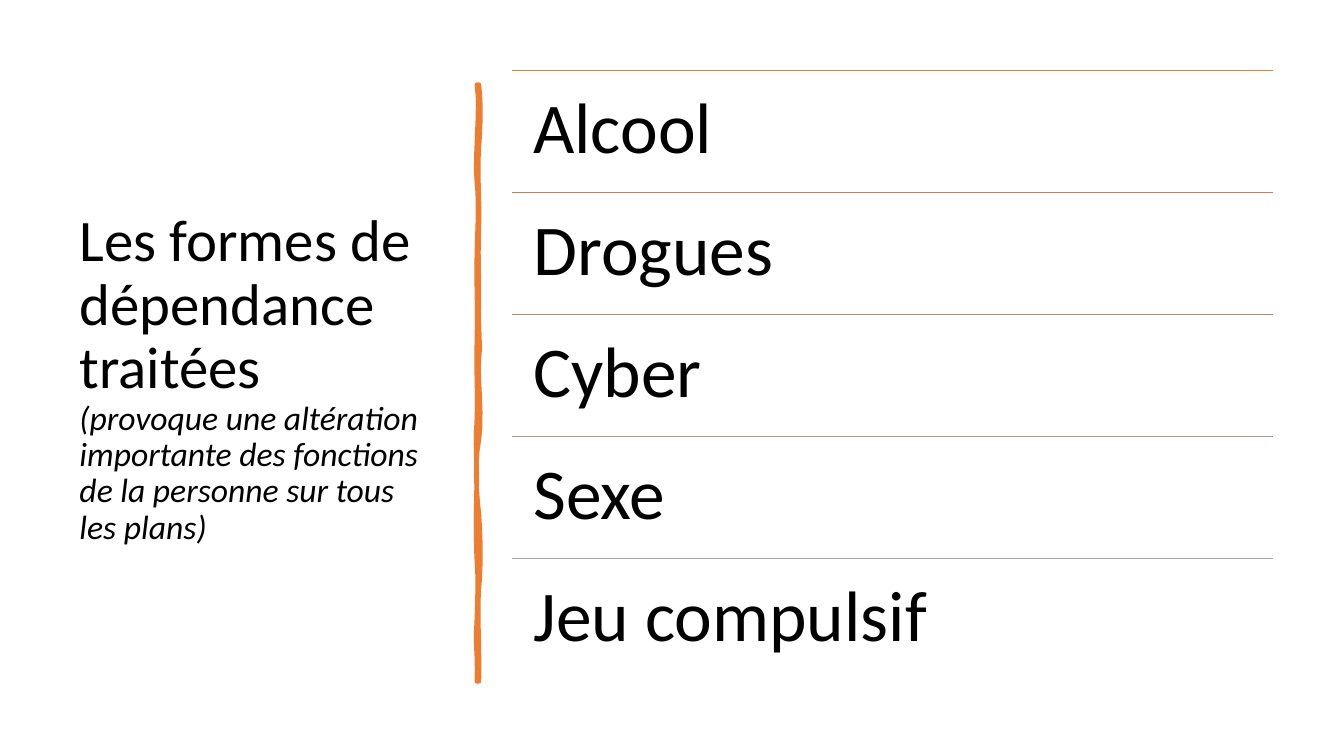
from lxml.etree import SubElement as Sub
from pptx import Presentation
from pptx.dml.color import RGBColor as Rgb
from pptx.enum.shapes import MSO_CONNECTOR as Conn
from pptx.enum.text import MSO_ANCHOR as Anchor
from pptx.oxml.ns import qn
from pptx.util import Inches, Pt

HUES = {
    "text": "000000",
    "bar": "ED7D31",
    "Alcool": "ED7D31",
    "Drogues": "D87A51",
    "Cyber": "C48170",
    "Sexe": "B4908B",
    "Jeu compulsif": "A5A5A5",
}
TOPICS = ["Alcool", "Drogues", "Cyber", "Sexe", "Jeu compulsif"]
LEFT, TOP, WIDTH, STEP = 5.08, 0.7, 7.55, 1.21
HEAD = {"size": Pt(42)}
NOTE = {"size": Pt(24), "italic": True}
ITEM = {"size": Pt(51)}
MID = {"vertical_anchor": Anchor.MIDDLE}
PAD = {f"margin_{side}": Inches(0.21)
       for side in ("left", "top", "right", "bottom")}
START = (4.75, 0.84)
CURVES = [
    (4.77, 1.02, 4.77, 1.19, 4.75, 1.46), (4.73, 1.73, 4.76, 1.95, 4.75, 2.26),
    (4.74, 2.57, 4.75, 2.62, 4.75, 2.94), (4.74, 3.25, 4.77, 3.42, 4.75, 3.56),
    (4.73, 3.7, 4.79, 4.14, 4.75, 4.36), (4.71, 4.57, 4.72, 4.84, 4.75, 5.1),
    (4.77, 5.36, 4.77, 5.64, 4.75, 5.84), (4.73, 6.03, 4.76, 6.5, 4.75, 6.76),
    (4.74, 6.76, 4.73, 6.76, 4.73, 6.76), (4.74, 6.46, 4.71, 6.44, 4.73, 6.13),
    (4.74, 5.83, 4.74, 5.7, 4.73, 5.57), (4.72, 5.44, 4.72, 4.95, 4.73, 4.77),
    (4.73, 4.59, 4.71, 4.45, 4.73, 4.15), (4.74, 3.86, 4.72, 3.73, 4.73, 3.35),
    (4.74, 2.98, 4.72, 2.81, 4.73, 2.5), (4.74, 2.18, 4.75, 2, 4.73, 1.81),
    (4.7, 1.63, 4.77, 1.04, 4.73, 0.84), (4.74, 0.84, 4.74, 0.84, 4.75, 0.84),
]


def put(obj, vals):
    """Set each named attribute of an object."""
    for name, val in vals.items():
        setattr(obj, name, val)


def hue(name):
    """Look up a colour by name."""
    return Rgb.from_string(HUES[name])


def add_run(para, text, font):
    """Add one run of formatted text."""
    run = para.add_run()
    run.text = text
    put(run.font, {"name": "Calibri", **font})
    run.font.color.rgb = hue("text")


def add_box(shapes, box, frame):
    """Add a wrapping text box and return its first paragraph."""
    body = shapes.add_textbox(*map(Inches, box)).text_frame
    put(body, {"word_wrap": True, **frame})
    para = body.paragraphs[0]
    para.line_spacing = 0.9
    return para


def add_title(shapes):
    """Add the heading with its italic note."""
    para = add_box(shapes, (0.69, 0.7, 3.74, 6.11), MID)
    add_run(para, "Les formes de dépendance traitées", HEAD)
    para.add_line_break()
    add_run(para, "(provoque une altération importante des fonctions "
            "de la personne sur tous les plans)", NOTE)


def trace(start, curves, steps=6):
    """Turn cubic curves into a list of points."""
    dots = [start]
    for ax, ay, bx, by, cx, cy in curves:
        x, y = dots[-1]
        for n in range(1, steps + 1):
            t = n / steps
            u = 1 - t
            mix = (u ** 3, 3 * u * u * t, 3 * u * t * t, t ** 3)
            dots.append((sum(m * v for m, v in zip(mix, (x, ax, bx, cx))),
                         sum(m * v for m, v in zip(mix, (y, ay, by, cy)))))
    return dots


def add_bar(shapes):
    """Draw the wavy upright bar."""
    dots = [(Inches(x), Inches(y)) for x, y in trace(START, CURVES)]
    pen = shapes.build_freeform(*dots[0])
    pen.add_line_segments(dots[1:], close=True)
    bar = pen.convert_to_shape()
    bar.shadow.inherit = False
    bar.fill.solid()
    bar.fill.fore_color.rgb = hue("bar")
    bar.line.color.rgb = hue("bar")
    bar.line.width = Pt(3.25)


def add_rule(shapes, top, name):
    """Draw the thin line above a topic."""
    ends = map(Inches, (LEFT, top, LEFT + WIDTH, top))
    rule = shapes.add_connector(Conn.STRAIGHT, *ends)
    rule.line.color.rgb = hue(name)
    rule.line.width = Pt(1)
    Sub(rule._element.spPr, qn("a:effectLst"))


def add_list(shapes):
    """Stack the topics in evenly spaced rows."""
    rows = shapes.add_group_shape().shapes
    for i, topic in enumerate(TOPICS):
        top = TOP + i * STEP
        add_rule(rows, top, topic)
        para = add_box(rows, (LEFT, top, WIDTH, STEP), PAD)
        add_run(para, topic, ITEM)


def main():
    """Build and save the slide."""
    deck = Presentation()
    put(deck, {"slide_width": Inches(13.33), "slide_height": Inches(7.5)})
    shapes = deck.slides.add_slide(deck.slide_layouts[6]).shapes
    add_title(shapes)
    add_bar(shapes)
    add_list(shapes)
    deck.save("out.pptx")


if __name__ == "__main__":
    main()
